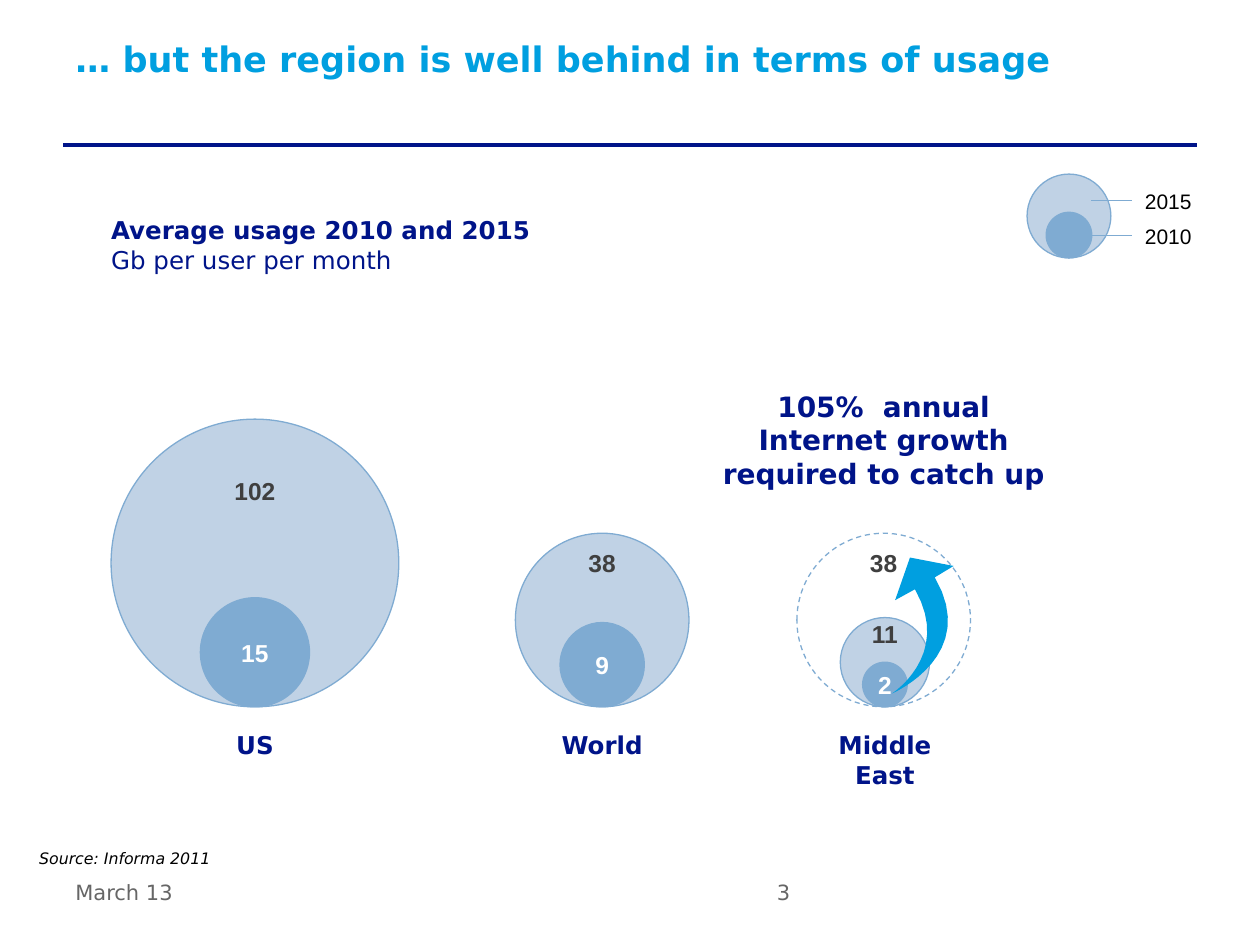
from collections import namedtuple
from dataclasses import dataclass

from lxml import etree
from pptx import Presentation
from pptx.dml.color import RGBColor
from pptx.enum.dml import MSO_LINE
from pptx.enum.shapes import MSO_CONNECTOR, MSO_SHAPE as Shape
from pptx.enum.text import MSO_ANCHOR as Anchor, PP_ALIGN as Align
from pptx.oxml.ns import qn
from pptx.util import Cm, Pt

# Boxes and positions are in centimetres
Box = namedtuple("Box", "left top width height")


@dataclass(frozen=True)
class Theme:
    navy: str = "001489"
    cyan: str = "009FE0"
    pale: str = "C0D2E5"
    blue: str = "7FABD2"
    dark: str = "3F3F3F"
    grey: str = "666666"
    black: str = "000000"
    white: str = "FFFFFF"
    heading_font: str = "DejaVu Sans"
    figure_font: str = "Arial"
    title: int = 20
    callout: int = 16
    body: int = 14
    small: int = 12
    source: int = 9
    outline: float = 0.75


THEME = Theme()


def colour(value):
    return RGBColor.from_string(value)


def write(frame, text, *, size=THEME.body, color=THEME.navy, font=THEME.heading_font,
          bold=False, italic=False, align=Align.LEFT, anchor=Anchor.TOP,
          margins=None, wrap=True, more=False):
    """Write one formatted paragraph; more=True adds it below the earlier ones."""
    frame.word_wrap = wrap
    frame.vertical_anchor = anchor
    if margins is not None:
        (frame.margin_left, frame.margin_top,
         frame.margin_right, frame.margin_bottom) = [Cm(margin) for margin in margins]
    paragraph = frame.add_paragraph() if more else frame.paragraphs[0]
    paragraph.alignment = align
    run = paragraph.add_run()
    run.text = text
    run.font.size, run.font.name = Pt(size), font
    run.font.bold, run.font.italic = bold, italic
    run.font.color.rgb = colour(color)


def add_text(slide, box, text, **style):
    frame = slide.shapes.add_textbox(*map(Cm, box)).text_frame
    write(frame, text, **style)
    return frame


def add_line(slide, start, end, color, width):
    line = slide.shapes.add_connector(MSO_CONNECTOR.STRAIGHT, *map(Cm, start + end))
    line.line.color.rgb = colour(color)
    line.line.width = Pt(width)
    etree.SubElement(line._element.spPr, qn("a:effectLst"))


def add_circle(slide, center, base, diameter, fill=None, label=None,
               label_color=THEME.dark, lift=0):
    """Stand a circle on a base line; lift raises its label above the middle."""
    box = Box(center - diameter / 2, base - diameter, diameter, diameter)
    circle = slide.shapes.add_shape(Shape.OVAL, *map(Cm, box))
    circle.shadow.inherit = False
    circle.line.color.rgb = colour(THEME.blue)
    circle.line.width = Pt(THEME.outline)
    if fill:
        circle.fill.solid()
        circle.fill.fore_color.rgb = colour(fill)
    else:
        circle.fill.background()
        circle.line.dash_style = MSO_LINE.DASH
    if label:
        write(circle.text_frame, label, font=THEME.figure_font, bold=True,
              color=label_color, align=Align.CENTER, anchor=Anchor.MIDDLE,
              margins=(0, 0, 0, 2 * lift), wrap=False)


def add_header(slide, box):
    add_text(slide, box, "… but the region is well behind in terms of usage",
             size=THEME.title, color=THEME.cyan, bold=True)
    bottom = box.top + box.height
    add_line(slide, (box.left, bottom), (box.left + box.width, bottom), THEME.navy, 2)


def add_chart_heading(slide, box):
    frame = add_text(slide, box, "Average usage 2010 and 2015", bold=True,
                     margins=(0, 0, 0, 0))
    write(frame, "Gb per user per month", more=True)


def add_legend(slide, box):
    center, base = box.left + 0.85, box.top + box.height
    add_circle(slide, center, base, 1.69, THEME.pale)
    add_circle(slide, center, base, 0.92, THEME.blue)
    for year, offset in (("2015", 0.54), ("2010", 1.25)):
        y = box.top + offset
        add_line(slide, (box.left + 1.3, y), (box.left + 2.13, y),
                 THEME.blue, THEME.outline)
        add_text(slide, Box(box.left + 2.13, y - 0.36, 1.65, 0.76), year,
                 size=THEME.small, color=THEME.black, font=THEME.figure_font)


def add_region(slide, box, name, later, earlier):
    """Draw nested 2015 and 2010 circles on the box's bottom, with the name below."""
    center, base = box.left + box.width / 2, box.top + box.height
    value, diameter, lift = later
    add_circle(slide, center, base, diameter, THEME.pale, value, lift=lift)
    value, diameter = earlier
    add_circle(slide, center, base, diameter, THEME.blue, value, THEME.white)
    add_text(slide, Box(box.left, base + 0.35, box.width, 0.86), name,
             bold=True, align=Align.CENTER)


def curve(start, control_1, control_2, end, steps=16):
    """Points along a cubic curve, without its start."""
    points = []
    for step in range(1, steps + 1):
        t = step / steps
        weights = ((1 - t) ** 3, 3 * t * (1 - t) ** 2, 3 * t ** 2 * (1 - t), t ** 3)
        points.append(tuple(
            sum(weight * value for weight, value in zip(weights, values))
            for values in zip(start, control_1, control_2, end)))
    return points


def add_growth_arrow(slide, box):
    tip, right, outer = (0.36, 0), (1.24, 0.17), (0.86, 0.4)
    tail, inner, left = (0, 2.74), (0.46, 0.64), (0.06, 0.86)
    outline = [right, outer, *curve(outer, (1.77, 1.95), (0.05, 2.72), tail),
               *curve(tail, (-0.08, 2.79), (1.24, 2), inner), left]
    points = [(Cm(box.left + x), Cm(box.top + y)) for x, y in [tip, *outline]]
    builder = slide.shapes.build_freeform(*points[0])
    builder.add_line_segments(points[1:], close=True)
    arrow = builder.convert_to_shape()
    arrow.shadow.inherit = False
    arrow.fill.solid()
    arrow.fill.fore_color.rgb = colour(THEME.cyan)
    arrow.line.fill.background()


def add_catch_up(slide, box):
    """Callout above a dashed target circle, with the arrow rising to it."""
    add_text(slide, Box(box.left, box.top, box.width, 2.31),
             "105%  annual Internet growth required to catch up",
             size=THEME.callout, bold=True, align=Align.CENTER)
    center, base = box.left + box.width / 2, box.top + box.height
    add_circle(slide, center, base, 3.5, label="38", lift=1.16)
    add_growth_arrow(slide, Box(center + 0.17, base - 3.01, 1.4, 2.74))


def add_footer(slide, box):
    add_text(slide, Box(box.left, box.top, 23.93, 0.38), "Source: Informa 2011",
             size=THEME.source, color=THEME.black, italic=True,
             anchor=Anchor.BOTTOM, margins=(0, 0, 0, 0))
    for text, offset, width, align in (("March 13", 0.48, 4.04, Align.LEFT),
                                       ("3", 14.12, 1.27, Align.RIGHT)):
        add_text(slide, Box(box.left + offset, box.top + 0.62, width, 0.48), text,
                 size=THEME.small, color=THEME.grey, align=align, anchor=Anchor.MIDDLE)


def main():
    presentation = Presentation()
    presentation.slide_width, presentation.slide_height = Cm(25.4), Cm(19.05)
    slide = presentation.slides.add_slide(presentation.slide_layouts[6])

    add_header(slide, Box(1.27, 0.64, 22.86, 2.28))
    add_chart_heading(slide, Box(2.24, 4.34, 11.66, 1.19))
    add_legend(slide, Box(20.7, 3.5, 3.78, 1.7))

    # Each region: name, centre, width, 2015 (value, diameter, lift), 2010
    regions = (
        ("US", 5.14, 5.8, ("102", 5.8, 1.46), ("15", 2.2)),
        ("World", 12.14, 3.5, ("38", 3.5, 1.16), ("9", 1.7)),
        ("Middle East", 17.84, 3.44, ("11", 1.8, 0.58), ("2", 0.9)),
    )
    for name, center, width, later, earlier in regions:
        add_region(slide, Box(center - width / 2, 8.45, width, 5.8),
                   name, later, earlier)
    add_catch_up(slide, Box(14.08, 7.72, 7.47, 6.53))
    add_footer(slide, Box(0.79, 17.12, 23.93, 1.1))

    presentation.save("out.pptx")


if __name__ == "__main__":
    main()
